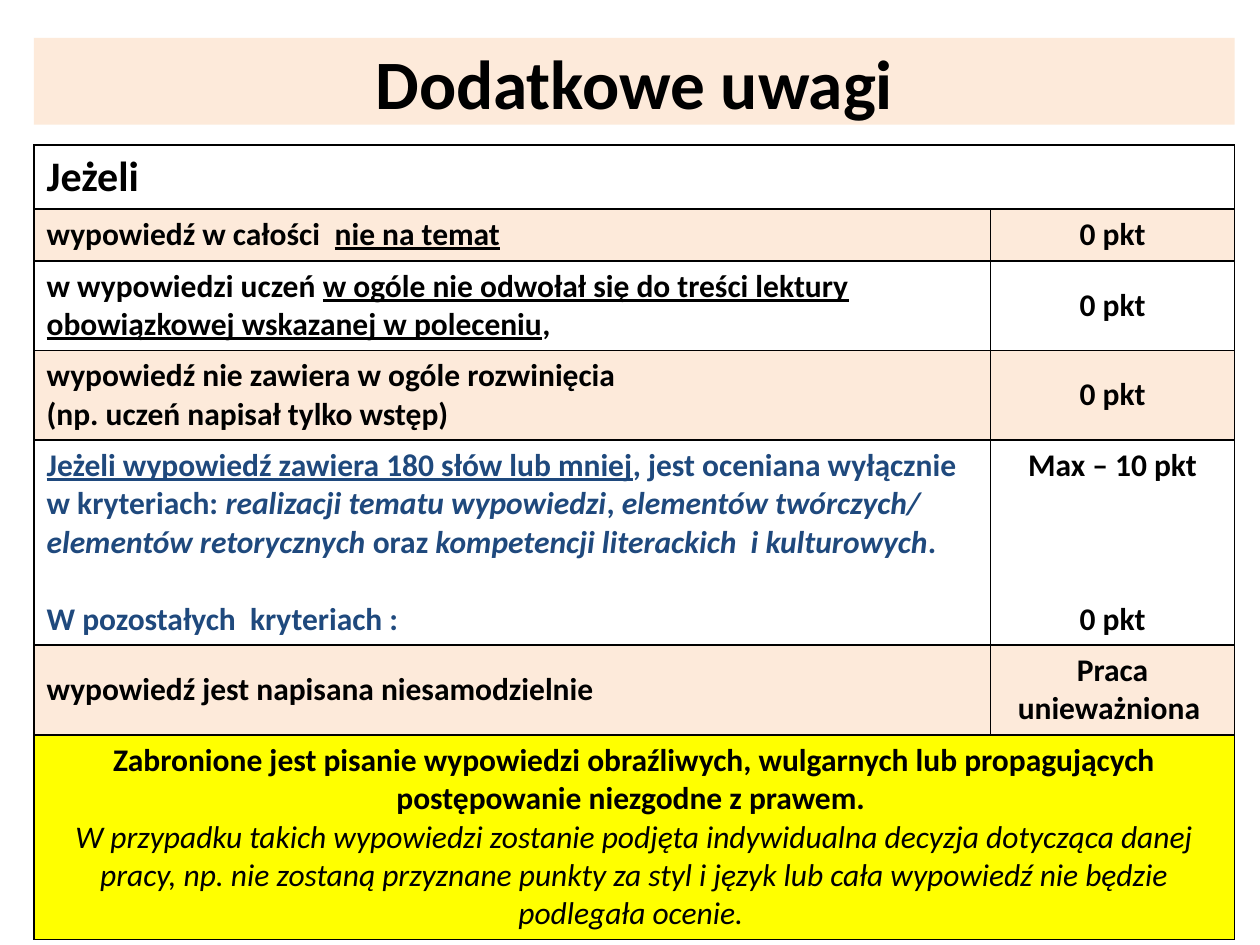
from pptx import Presentation
from pptx.dml.color import RGBColor
from pptx.enum.shapes import MSO_SHAPE as Shape
from pptx.enum.text import MSO_ANCHOR as Anchor, PP_ALIGN as Align
from pptx.oxml import parse_xml
from pptx.oxml.ns import nsdecls
from pptx.util import Inches, Pt

BLACK = RGBColor(0x00, 0x00, 0x00)
WHITE = RGBColor(0xFF, 0xFF, 0xFF)
PEACH = RGBColor(0xFD, 0xEA, 0xDA)
BLUE = RGBColor(0x1F, 0x49, 0x7D)
YELLOW = RGBColor(0xFF, 0xFF, 0x00)


def write(frame, paras, size=18, color=BLACK, align=Align.LEFT, gap=0):
    """Each paragraph is a list of (text, marks): u underline, i italic, r regular weight."""
    frame.word_wrap = True
    for n, runs in enumerate(paras):
        para = frame.add_paragraph() if n else frame.paragraphs[0]
        para.alignment = align
        para.space_before = Pt(gap if n else 0)
        for text, marks in runs:
            run = para.add_run()
            run.text = text
            font = run.font
            font.name, font.size = "Calibri", Pt(size)
            font.color.rgb = color
            font.bold = "r" not in marks
            font.italic = "i" in marks
            font.underline = "u" in marks


def border(cell):
    props = cell._tc.get_or_add_tcPr()
    for side in ("lnL", "lnR", "lnT", "lnB"):
        props.append(parse_xml(
            f'<a:{side} {nsdecls("a")} w="12700"><a:solidFill>'
            f'<a:srgbClr val="{BLACK}"/></a:solidFill></a:{side}>'))


deck = Presentation()
deck.slide_width, deck.slide_height = Inches(10), Inches(7.5)
slide = deck.slides.add_slide(deck.slide_layouts[6])
left, width = Inches(0.27), Inches(9.53)

# Title band
band = slide.shapes.add_shape(Shape.RECTANGLE, left, Inches(0.3), width, Inches(0.69))
band.shadow.inherit = False
band.fill.solid()
band.fill.fore_color.rgb = PEACH
band.line.fill.background()
band.text_frame.vertical_anchor = Anchor.MIDDLE
write(band.text_frame, [[("Dodatkowe uwagi", "")]], size=39.6, align=Align.CENTER)

# Table content: height, fill, left cell, right cell (None spans both columns)
zero = [[("0 pkt", "")]]
rows = [
    (0.51, WHITE, [[("Jeżeli", "")]], None),
    (0.41, PEACH, [[("wypowiedź w całości  ", ""), ("nie na temat", "u")]], zero),
    (0.71, WHITE, [[
        ("w wypowiedzi uczeń ", ""),
        ("w ogóle nie odwołał się do treści lektury obowiązkowej wskazanej w poleceniu", "u"),
        (",", "")]], zero),
    (0.71, PEACH, [[("wypowiedź nie zawiera w ogóle rozwinięcia", "")],
                   [("(np. uczeń napisał tylko wstęp)", "")]], zero),
    (1.63, WHITE, [
        [("Jeżeli wypowiedź zawiera 180 słów lub mniej", "u"),
         (", jest oceniana wyłącznie w kryteriach: ", ""),
         ("realizacji tematu wypowiedzi", "i"), (", ", ""),
         ("elementów twórczych/ elementów retorycznych ", "i"), ("oraz ", ""),
         ("kompetencji literackich  i kulturowych", "i"), (".", "")],
        [("W pozostałych  kryteriach :", "")]],
     [[("Max – 10 pkt", "")], [("0 pkt", "")]]),
    (0.71, PEACH, [[("wypowiedź jest napisana niesamodzielnie", "")]],
     [[("Praca unieważniona ", "")]]),
    (1.62, YELLOW, [
        [("Zabronione jest pisanie wypowiedzi obraźliwych, wulgarnych lub "
          "propagujących postępowanie niezgodne z prawem. ", "")],
        [("W przypadku takich wypowiedzi zostanie podjęta indywidualna decyzja "
          "dotycząca danej pracy, np. nie zostaną przyznane punkty za styl i język "
          "lub cała wypowiedź nie będzie podlegała ocenie. ", "ir")]], None),
]
LIMIT, LAST = 4, len(rows) - 1  # word-limit row and closing warning
LINE = 22  # height of one 18 pt line, in points

# Table
high = Inches(sum(row[0] for row in rows))
table = slide.shapes.add_table(len(rows), 2, left, Inches(1.15), width, high).table
table.first_row = table.horz_banding = False
table.columns[0].width, table.columns[1].width = Inches(7.59), Inches(1.94)

for n, (tall, fill, note, score) in enumerate(rows):
    table.rows[n].height = Inches(tall)
    main, side = table.cell(n, 0), table.cell(n, 1)
    for cell in (main, side):
        border(cell)
        cell.fill.solid()
        cell.fill.fore_color.rgb = fill
    write(main.text_frame, note,
          size=18 if n else 24,
          color=BLUE if n == LIMIT else BLACK,
          align=Align.CENTER if n == LAST else Align.LEFT,
          gap=LINE if n == LIMIT else 0)
    if n > LIMIT:
        main.vertical_anchor = Anchor.MIDDLE
    if score is None:
        main.merge(side)
        continue
    write(side.text_frame, score, align=Align.CENTER, gap=3 * LINE)
    if n < LIMIT:
        side.vertical_anchor = Anchor.MIDDLE

deck.save("out.pptx")
